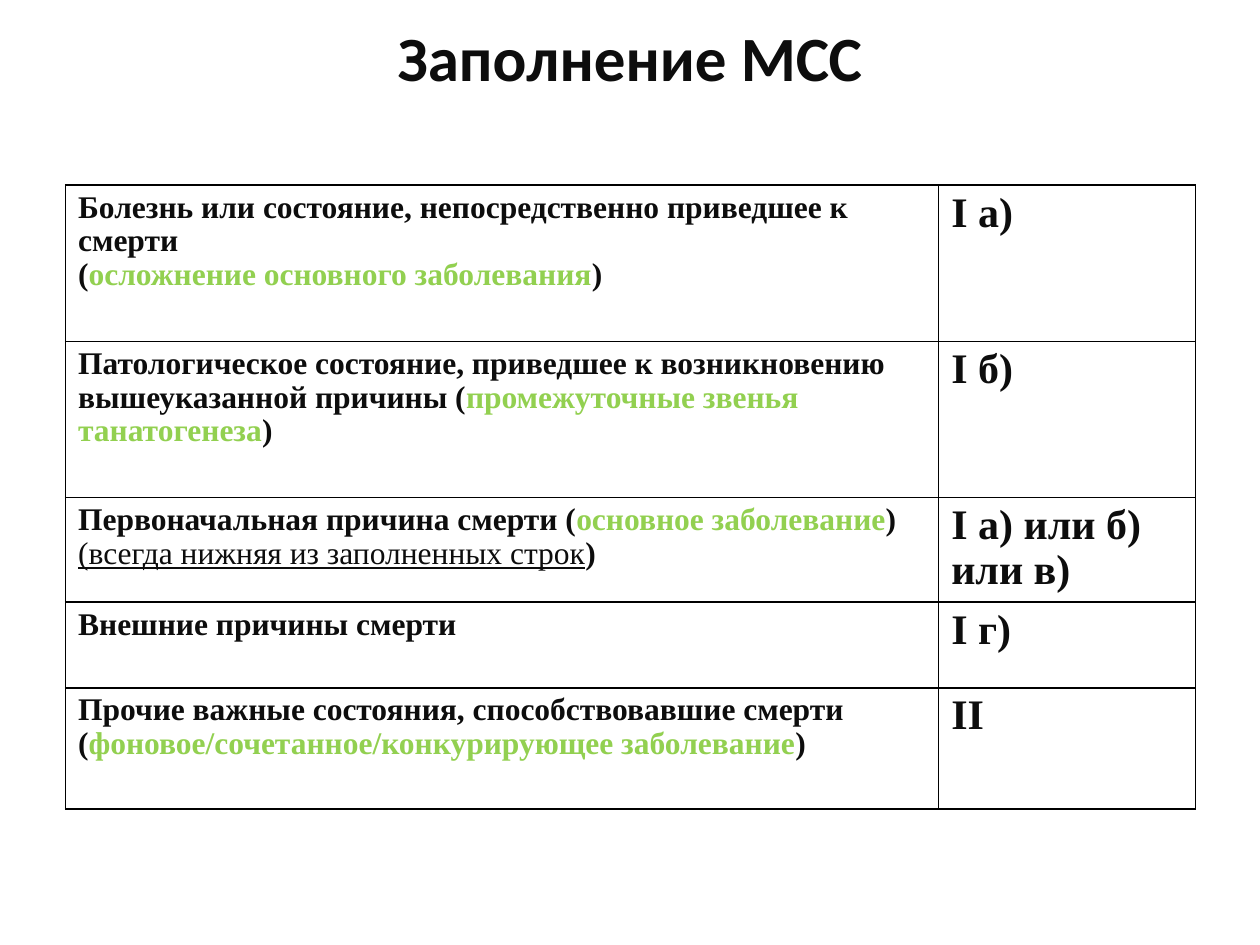
from lxml import etree
from pptx import Presentation
from pptx.dml.color import RGBColor
from pptx.enum.text import MSO_ANCHOR, PP_ALIGN
from pptx.oxml.ns import qn
from pptx.util import Inches, Pt

CENTER = PP_ALIGN.CENTER
MIDDLE = MSO_ANCHOR.MIDDLE
DARK = RGBColor(0x0D, 0x0D, 0x0D)
GREEN = RGBColor(0x92, 0xD0, 0x50)
WHITE = RGBColor(0xFF, 0xFF, 0xFF)
BLACK = RGBColor(0x00, 0x00, 0x00)

PLAIN, ACCENT, NOTE = "plain", "accent", "note"
ROWS = [
    (1.24, [[("Болезнь или состояние, непосредственно приведшее к смерти", PLAIN)],
            [("(", PLAIN), ("осложнение основного заболевания", ACCENT), (")", PLAIN)]],
     "I а)"),
    (1.24, [[("Патологическое состояние, приведшее к возникновению вышеуказанной причины (", PLAIN),
             ("промежуточные звенья танатогенеза", ACCENT), (")", PLAIN)]],
     "I б)"),
    (0.83, [[("Первоначальная причина смерти (", PLAIN),
             ("основное заболевание", ACCENT), (")", PLAIN)],
            [("(всегда нижняя из заполненных строк", NOTE), (")", PLAIN)]],
     "I а) или б) или в)"),
    (0.68, [[("Внешние причины смерти", PLAIN)]], "I г)"),
    (0.96, [[("Прочие важные состояния, способствовавшие смерти (", PLAIN),
             ("фоновое/сочетанное/конкурирующее заболевание", ACCENT), (")", PLAIN)]],
     "II"),
]


def fill_cell(cell, paragraphs, size):
    cell.fill.solid()
    cell.fill.fore_color.rgb = WHITE
    for index, pieces in enumerate(paragraphs):
        text_frame = cell.text_frame
        paragraph = text_frame.add_paragraph() if index else text_frame.paragraphs[0]
        paragraph.line_spacing = 0.96
        for text, style in pieces:
            run = paragraph.add_run()
            run.text = text
            run.font.name = "Times New Roman"
            run.font.size = Pt(size)
            run.font.bold = style != NOTE
            run.font.underline = style == NOTE
            run.font.color.rgb = GREEN if style == ACCENT else DARK


def add_borders(cell):
    properties = cell._tc.get_or_add_tcPr()
    for position, side in enumerate(("a:lnL", "a:lnR", "a:lnT", "a:lnB")):
        line = etree.Element(qn(side), w=str(Pt(1)))
        solid_fill = etree.SubElement(line, qn("a:solidFill"))
        etree.SubElement(solid_fill, qn("a:srgbClr"), val=str(BLACK))
        properties.insert(position, line)


presentation = Presentation()
presentation.slide_width = Inches(10)
presentation.slide_height = Inches(7.5)
slide = presentation.slides.add_slide(presentation.slide_layouts[5])

title = slide.shapes.title
title.left, title.top = Inches(0.69), Inches(0.21)
title.width, title.height = Inches(8.62), Inches(0.55)
title.text_frame.text = "Заполнение МСС"
title.text_frame.vertical_anchor = MIDDLE
paragraph = title.text_frame.paragraphs[0]
paragraph.alignment = CENTER
paragraph.line_spacing = 0.9
font = paragraph.runs[0].font
font.name = "Calibri"
font.size = Pt(36)
font.bold = True
font.color.rgb = DARK

table_height = sum(height for height, _, _ in ROWS)
table = slide.shapes.add_table(
    len(ROWS), 2, Inches(0.52), Inches(1.47), Inches(8.97), Inches(table_height)
).table
table.first_row = False
table.horz_banding = False
table.columns[0].width = Inches(6.93)
table.columns[1].width = Inches(2.04)

for row_index, (height, description, line_label) in enumerate(ROWS):
    table.rows[row_index].height = Inches(height)
    fill_cell(table.cell(row_index, 0), description, 18)
    fill_cell(table.cell(row_index, 1), [[(line_label, PLAIN)]], 24)

for cell in table.iter_cells():
    add_borders(cell)

presentation.save("out.pptx")
